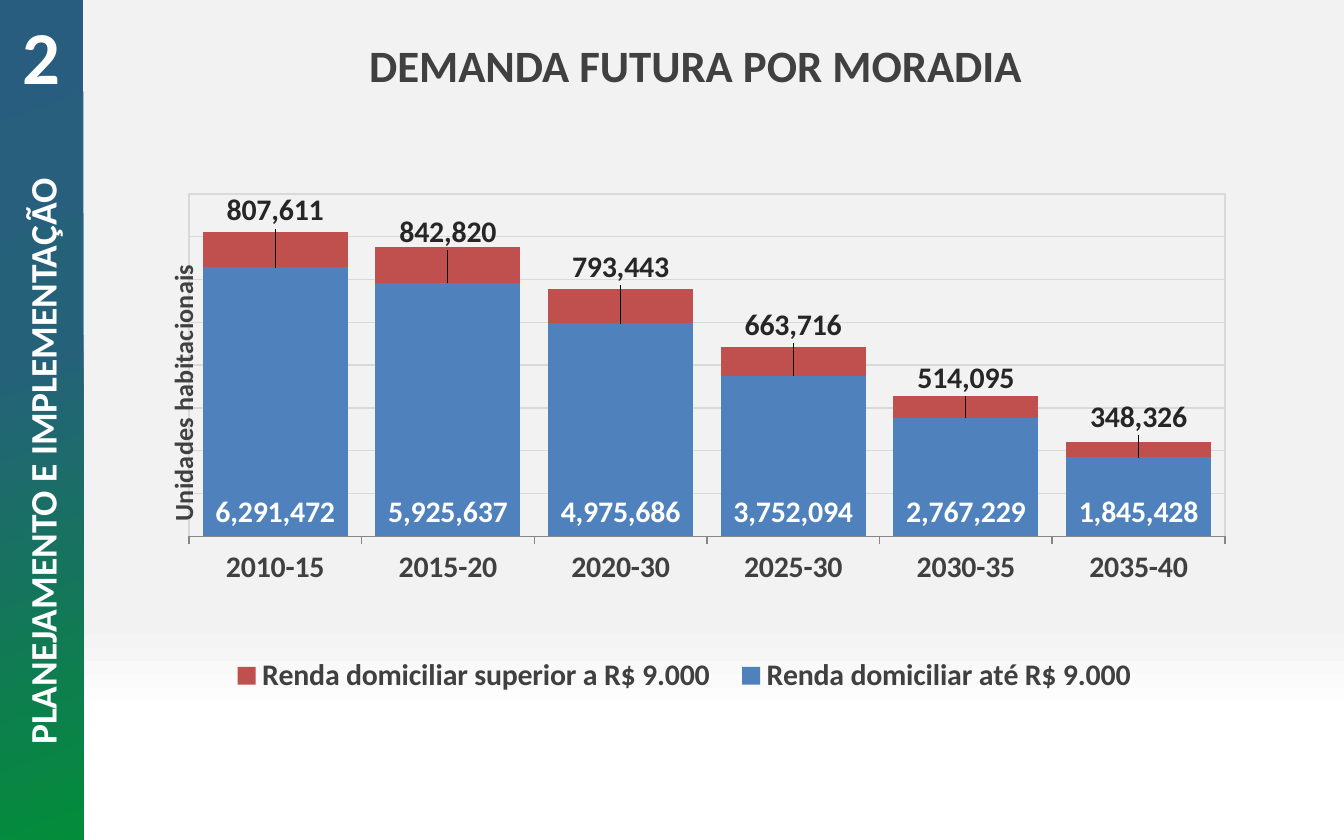
from lxml import etree
from pptx import Presentation
from pptx.chart.data import CategoryChartData
from pptx.dml.color import RGBColor
from pptx.enum import chart as chart_enum, shapes, text
from pptx.oxml import ns
from pptx.util import Inches, Pt

FONT = "Calibri"
WHITE = RGBColor(0xFF, 0xFF, 0xFF)
PALE = RGBColor(0xF2, 0xF2, 0xF2)
DARK = RGBColor(0x40, 0x40, 0x40)
BLACK = RGBColor(0x26, 0x26, 0x26)
GRID = RGBColor(0xD9, 0xD9, 0xD9)
AXIS = RGBColor(0x86, 0x86, 0x86)
BLUE = RGBColor(0x4F, 0x81, 0xBD)
RED = RGBColor(0xC0, 0x50, 0x4D)
NAVY = RGBColor(0x28, 0x5D, 0x7F)
TEAL = RGBColor(0x25, 0x61, 0x79)
GREEN = RGBColor(0x03, 0x8C, 0x3A)

PERIODS = ["2010-15", "2015-20", "2020-30", "2025-30", "2030-35", "2035-40"]
SERIES = [
    ("Renda domiciliar até R$ 9.000", BLUE, WHITE,
     [6291472, 5925637, 4975686, 3752094, 2767229, 1845428]),
    ("Renda domiciliar superior a R$ 9.000", RED, BLACK,
     [807611, 842820, 793443, 663716, 514095, 348326]),
]
# Upward shift of each upper label, as a share of the chart height
LABEL_SHIFTS = [0.06, 0.05, 0.06, 0.05, 0.03, 0.03]


def set_gradient(fill, element, stops, angle):
    fill.gradient()
    fill.gradient_angle = 360 - angle
    stop_list = element.find(".//" + ns.qn("a:gsLst"))
    for stop in list(stop_list):
        stop_list.remove(stop)
    for percent, color in stops:
        stop = etree.SubElement(stop_list, ns.qn("a:gs"), pos=str(percent * 1000))
        etree.SubElement(stop, ns.qn("a:srgbClr"), val=str(color))


def set_layout(parent, index, **values):
    """Give a chart part a manual layout, as the child at the given index."""
    for old in parent.findall(ns.qn("c:layout")):
        parent.remove(old)
    layout = etree.Element(ns.qn("c:layout"))
    manual = etree.SubElement(layout, ns.qn("c:manualLayout"))
    for name, value in values.items():
        etree.SubElement(manual, ns.qn("c:" + name), val=str(value))
    parent.insert(index, layout)


def style_font(font, size, color):
    font.name, font.size, font.bold = FONT, Pt(size), True
    font.color.rgb = color


def write_text(shape, box, words, size, color):
    shape.left, shape.top, shape.width, shape.height = map(Inches, box)
    frame = shape.text_frame
    frame.word_wrap = True
    frame.auto_size = text.MSO_AUTO_SIZE.NONE
    frame.vertical_anchor = text.MSO_ANCHOR.MIDDLE
    frame.margin_left = frame.margin_right = frame.margin_top = frame.margin_bottom = 0
    paragraph = frame.paragraphs[0]
    paragraph.alignment = text.PP_ALIGN.CENTER
    paragraph.space_before = Pt(0)
    run = paragraph.add_run()
    run.text = words
    style_font(run.font, size, color)


def add_sidebar(slide, left, top, width, height):
    # Gradient band
    band = slide.shapes.add_shape(shapes.MSO_SHAPE.RECTANGLE,
                                  *map(Inches, (left, top, width, height)))
    band.shadow.inherit = False
    band.line.fill.background()
    set_gradient(band.fill, band._element, [(0, NAVY), (42, TEAL), (100, GREEN)], 70)

    # Section name, read upwards
    length, thickness = 5.29, 0.43
    section = slide.shapes.add_textbox(0, 0, 0, 0)
    write_text(section, (left + width / 2 - length / 2, top + 3.22, length, thickness),
               "PLANEJAMENTO E IMPLEMENTAÇÃO", 20, WHITE)
    section.rotation = 270

    # Section number
    number = slide.shapes.add_textbox(0, 0, 0, 0)
    write_text(number, (left, top, width, 0.82), "2", 40, WHITE)


def add_demand_chart(slide, left, top, width, height):
    data = CategoryChartData(number_format="#,##0")
    data.categories = PERIODS
    for name, _, _, values in SERIES:
        data.add_series(name, values)
    chart = slide.shapes.add_chart(chart_enum.XL_CHART_TYPE.COLUMN_STACKED,
                                   *map(Inches, (left, top, width, height)), data).chart
    chart.has_title = False
    style_font(chart.font, 16, DARK)

    # Plot area with a thin frame
    plot_area = chart._chartSpace.find(".//" + ns.qn("c:plotArea"))
    set_layout(plot_area, 0, layoutTarget="inner", xMode="edge", yMode="edge",
               x=0.036, y=0.038, w=0.939, h=0.634)
    frame = etree.SubElement(plot_area, ns.qn("c:spPr"))
    etree.SubElement(frame, ns.qn("a:noFill"))
    line = etree.SubElement(frame, ns.qn("a:ln"), w=str(Pt(0.75)))
    line_fill = etree.SubElement(line, ns.qn("a:solidFill"))
    etree.SubElement(line_fill, ns.qn("a:srgbClr"), val=str(GRID))

    # Columns and their labels
    plot = chart.plots[0]
    plot.gap_width, plot.overlap = 19, 100
    plot.vary_by_categories = False
    for series, (_, color, label_color, _) in zip(plot.series, SERIES):
        series.format.fill.solid()
        series.format.fill.fore_color.rgb = color
        labels = series.data_labels
        labels.show_value = True
        labels.number_format, labels.number_format_is_linked = "#,##0", False
        labels.position = chart_enum.XL_LABEL_POSITION.INSIDE_BASE
        style_font(labels.font, 16, label_color)
    upper = plot.series[1]
    for index, shift in enumerate(LABEL_SHIFTS):
        label = upper.points[index].data_label
        style_font(label.font, 16, BLACK)
        label.position = chart_enum.XL_LABEL_POSITION.INSIDE_BASE
    for label, shift in zip(upper._element.iter(ns.qn("c:dLbl")), LABEL_SHIFTS):
        set_layout(label, 1, x=0, y=-shift)

    # Axes
    category_axis = chart.category_axis
    category_axis.major_tick_mark = chart_enum.XL_TICK_MARK.OUTSIDE
    category_axis.format.line.color.rgb = AXIS
    style_font(category_axis.tick_labels.font, 16, DARK)
    value_axis = chart.value_axis
    value_axis.visible = False
    value_axis.minimum_scale, value_axis.maximum_scale = 0, 8000000
    value_axis.major_unit = 1000000
    value_axis.major_gridlines.format.line.color.rgb = GRID
    value_axis.major_gridlines.format.line.width = Pt(0.75)
    axis_title = value_axis.axis_title
    run = axis_title.text_frame.paragraphs[0].add_run()
    run.text = "Unidades habitacionais"
    style_font(run.font, 14, DARK)
    title_body = axis_title._element.find(".//" + ns.qn("a:bodyPr"))
    title_body.set("rot", "-5400000")
    title_body.set("vert", "horz")
    set_layout(axis_title._element, 1, xMode="edge", yMode="edge", x=0.01, y=0.16)

    # Legend in one row below the columns
    chart.has_legend = True
    legend = chart.legend
    legend.position = chart_enum.XL_LEGEND_POSITION.RIGHT
    legend.include_in_layout = False
    style_font(legend.font, 16, DARK)
    set_layout(legend._element, 1, xMode="edge", yMode="edge",
               x=0.06, y=0.88, w=0.85, h=0.1)


def main():
    presentation = Presentation()
    presentation.slide_width, presentation.slide_height = Inches(10), Inches(6.25)
    slide = presentation.slides.add_slide(presentation.slide_layouts[5])
    set_gradient(slide.background.fill, slide._element,
                 [(0, PALE), (74, PALE), (85, WHITE), (100, WHITE)], 90)
    add_sidebar(slide, 0, 0, 0.62, 6.25)
    write_text(slide.shapes.title, (1.53, 0.23, 7.29, 0.5),
               "DEMANDA FUTURA POR MORADIA", 24, DARK)
    add_demand_chart(slide, 1.11, 1.29, 8.21, 4.02)
    presentation.save("out.pptx")


if __name__ == "__main__":
    main()
